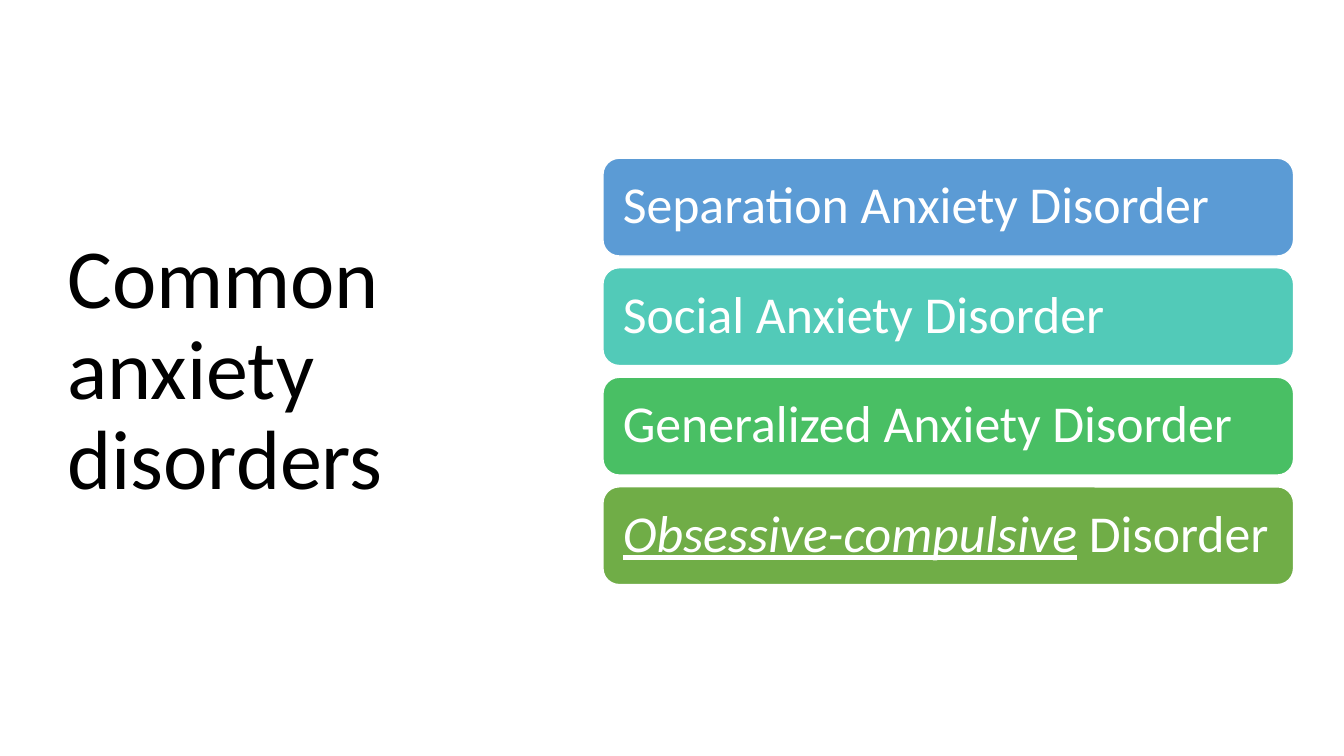
from dataclasses import dataclass

from pptx import Presentation
from pptx.dml.color import RGBColor
from pptx.enum.shapes import MSO_SHAPE
from pptx.enum.text import MSO_ANCHOR, PP_ALIGN
from pptx.util import Inches, Pt


@dataclass(frozen=True)
class Theme:
    font: str = "Calibri"
    title_size: int = 60
    bar_size: int = 37
    black: str = "000000"
    white: str = "FFFFFF"
    bars: tuple = ("5B9BD5", "52CAB8", "49BF64", "70AD47")


THEME = Theme()
PLAIN = {}
EMPHASIS = {"italic": True, "underline": True}

TITLE = "Common anxiety disorders"
# Each disorder is a list of (text, font format) pieces
DISORDERS = [
    [("Separation Anxiety Disorder", PLAIN)],
    [("Social Anxiety Disorder", PLAIN)],
    [("Generalized Anxiety Disorder", PLAIN)],
    [("Obsessive-compulsive", EMPHASIS), (" Disorder", PLAIN)],
]

BAR_LEFT, BAR_WIDTH, BAR_HEIGHT = 5.98, 6.85, 0.97
FIRST_TOP, LAST_TOP = 1.57, 4.83


def apply_format(target, values):
    for name, value in values.items():
        setattr(target, name, value)


def write_line(frame, pieces, size, color, margins):
    """Fill a frame with one left-aligned, vertically centred paragraph."""
    apply_format(frame, {"word_wrap": True, "vertical_anchor": MSO_ANCHOR.MIDDLE, **margins})
    paragraph = frame.paragraphs[0]
    apply_format(paragraph, {"alignment": PP_ALIGN.LEFT, "line_spacing": 0.9})
    for text, extra in pieces:
        piece = paragraph.add_run()
        piece.text = text
        apply_format(piece.font, {"name": THEME.font, "size": Pt(size), **extra})
        piece.font.color.rgb = RGBColor.from_string(color)


def add_title(slide):
    title = slide.shapes.add_textbox(Inches(0.57), Inches(0.68), Inches(4.16), Inches(6.02))
    write_line(title.text_frame, [(TITLE, PLAIN)], THEME.title_size, THEME.black, {})


def add_disorder_bar(slide, top, pieces, color):
    bar = slide.shapes.add_shape(
        MSO_SHAPE.ROUNDED_RECTANGLE,
        Inches(BAR_LEFT), Inches(top), Inches(BAR_WIDTH), Inches(BAR_HEIGHT),
    )
    bar.shadow.inherit = False
    bar.fill.solid()
    bar.fill.fore_color.rgb = RGBColor.from_string(color)
    bar.line.color.rgb = RGBColor.from_string(THEME.white)
    bar.line.width = Pt(1)
    margins = {
        "margin_left": Inches(0.15), "margin_right": Inches(0.15),
        "margin_top": Inches(0.15), "margin_bottom": Inches(0.15),
    }
    write_line(bar.text_frame, pieces, THEME.bar_size, THEME.white, margins)


def main():
    deck = Presentation()
    apply_format(deck, {"slide_width": Inches(13.33), "slide_height": Inches(7.5)})
    slide = deck.slides.add_slide(deck.slide_layouts[6])

    # Heading on the left
    add_title(slide)

    # Evenly spaced bars on the right
    pitch = (LAST_TOP - FIRST_TOP) / (len(DISORDERS) - 1)
    for row, (pieces, color) in enumerate(zip(DISORDERS, THEME.bars)):
        add_disorder_bar(slide, FIRST_TOP + row * pitch, pieces, color)

    deck.save("out.pptx")


if __name__ == "__main__":
    main()
